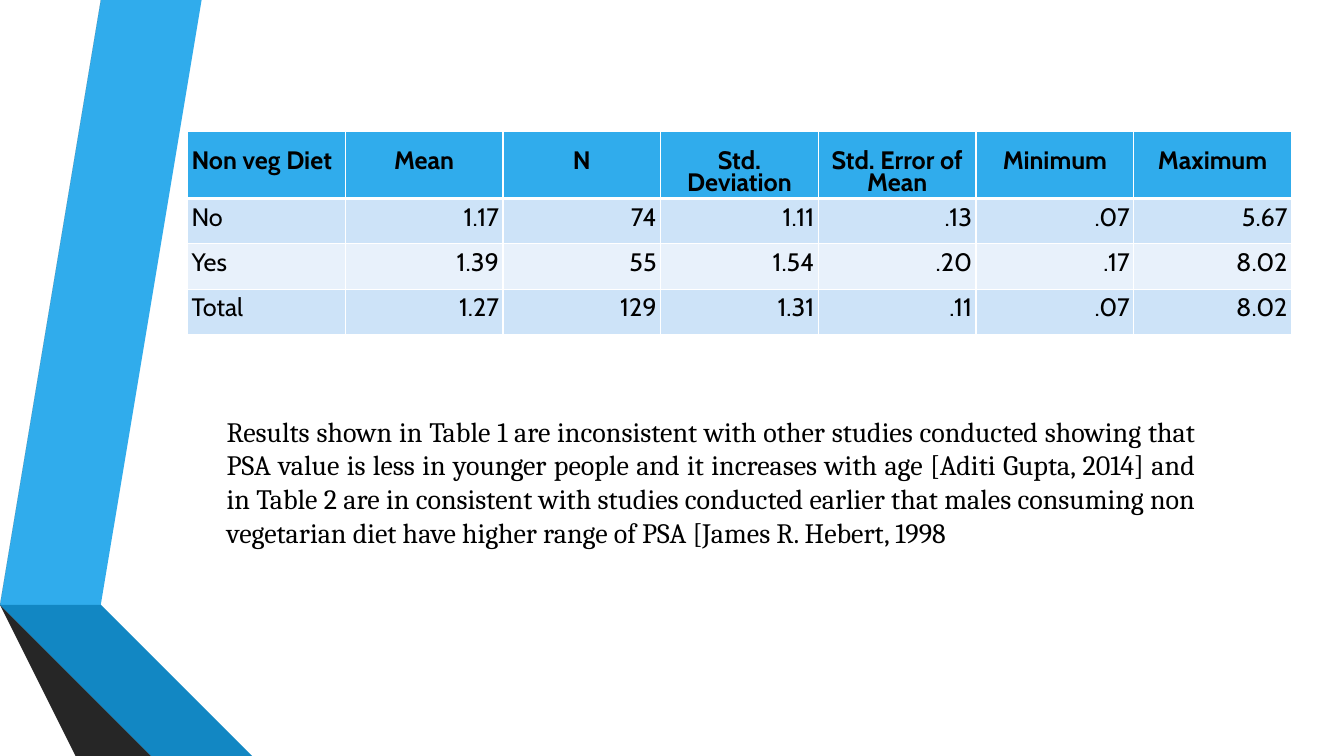
from dataclasses import dataclass

from lxml import etree
from pptx import Presentation
from pptx import util as u
from pptx.dml import color
from pptx.enum import text
from pptx.oxml import ns
from pptx.slide import Slide
from pptx.table import _Cell
from pptx.text.text import _Paragraph


@dataclass(frozen=True)
class Theme:
    blue: str = "30ACEC"
    deep_blue: str = "1287C3"
    navy: str = "0C5A82"
    gray: str = "595959"
    dark_gray: str = "404040"
    charcoal: str = "262626"
    band_dark: str = "CDE3F8"
    band_light: str = "E8F1FB"
    white: str = "FFFFFF"
    ink: str = "000000"
    table_font: str = "Cabin"
    body_font: str = "Cambria"
    table_size: int = 18
    body_size: int = 20
    table_line: int = 16


@dataclass(frozen=True)
class Ribbon:
    fill: str
    points: tuple[tuple[float, float], ...]


THEME = Theme()

RIBBONS = (
    Ribbon(THEME.blue, ((0.5, 5.78), (0.77, 5.83), (1.73, 0), (1.45, 0))),
    Ribbon(THEME.gray, ((1.39, 0), (1.11, 0), (0.16, 5.73), (0.44, 5.77))),
    Ribbon(THEME.charcoal, ((0.16, 5.73), (1.45, 7.5), (1.51, 7.5))),
    Ribbon(THEME.navy, ((0.5, 5.79), (2.08, 7.5), (2.14, 7.5))),
    Ribbon(THEME.deep_blue, ((0.5, 5.79), (2.14, 7.5), (2.83, 7.5), (0.77, 5.83), (0.5, 5.78))),
    Ribbon(THEME.dark_gray, ((2.02, 7.5), (0.48, 5.83), (0.43, 5.78), (0.44, 5.77),
                             (0.16, 5.73), (1.51, 7.5))),
)

DIET_ROWS = (
    ("Non veg Diet", "Mean", "N", "Std. Deviation", "Std. Error of Mean", "Minimum", "Maximum"),
    ("No", "1.17", "74", "1.11", ".13", ".07", "5.67"),
    ("Yes", "1.39", "55", "1.54", ".20", ".17", "8.02"),
    ("Total", "1.27", "129", "1.31", ".11", ".07", "8.02"),
)

FINDINGS = (
    "Results shown in Table 1 are inconsistent with other studies conducted showing that "
    "PSA value is less in younger people and it increases with age [Aditi Gupta, 2014] and "
    "in Table 2 are in consistent with studies conducted earlier that males consuming non "
    "vegetarian diet have higher range of PSA [James R. Hebert, 1998"
)


def add_span(para: _Paragraph, words: str, font: str, size: int, bold: bool = False) -> None:
    span = para.add_run()
    span.text = words
    span.font.name = font
    span.font.size = u.Pt(size)
    span.font.bold = bold
    span.font.color.rgb = color.RGBColor.from_string(THEME.ink)


def add_ribbons(page: Slide) -> None:
    group = page.shapes.add_group_shape()
    for ribbon in RIBBONS:
        start, *rest = ribbon.points
        builder = group.shapes.build_freeform(*start, scale=u.Inches(1))
        builder.add_line_segments(rest, close=True)
        shape = builder.convert_to_shape()
        shape.shadow.inherit = False
        shape.fill.solid()
        shape.fill.fore_color.rgb = color.RGBColor.from_string(ribbon.fill)
        shape.line.fill.background()


def set_borders(cell: _Cell, row: int) -> None:
    """Thin white rules, with a thick one under the header."""
    properties = cell._tc.get_or_add_tcPr()
    widths = {"lnL": 1, "lnR": 1, "lnT": 3 if row == 1 else 1, "lnB": 3 if row == 0 else 1}
    for side, width in widths.items():
        line = etree.SubElement(properties, ns.qn(f"a:{side}"), w=str(u.Pt(width)))
        fill = etree.SubElement(line, ns.qn("a:solidFill"))
        etree.SubElement(fill, ns.qn("a:srgbClr"), val=THEME.white)


def fill_cell(cell: _Cell, row: int, column: int, words: str) -> None:
    header = row == 0
    set_borders(cell, row)
    band = THEME.band_dark if row % 2 else THEME.band_light
    cell.fill.solid()
    cell.fill.fore_color.rgb = color.RGBColor.from_string(THEME.blue if header else band)
    cell.margin_left = cell.margin_right = u.Inches(0.04)
    cell.margin_top = u.Pt(THEME.table_line) if header else 0
    cell.margin_bottom = 0
    cell.vertical_anchor = text.MSO_ANCHOR.TOP if header else text.MSO_ANCHOR.MIDDLE
    para = cell.text_frame.paragraphs[0]
    para.line_spacing = u.Pt(THEME.table_line)
    if column == 0:
        para.alignment = text.PP_ALIGN.LEFT
    else:
        para.alignment = text.PP_ALIGN.CENTER if header else text.PP_ALIGN.RIGHT
    add_span(para, words, THEME.table_font, THEME.table_size, bold=header)


def add_diet_table(page: Slide) -> None:
    frame = page.shapes.add_table(len(DIET_ROWS), len(DIET_ROWS[0]), u.Inches(1.86),
                                  u.Inches(1.3), u.Inches(10.95), u.Inches(2.02))
    table = frame.table
    for row, values in enumerate(DIET_ROWS):
        table.rows[row].height = u.Inches(0.45 if row else 0.67)
        for column, words in enumerate(values):
            fill_cell(table.cell(row, column), row, column, words)


def add_findings(page: Slide) -> None:
    box = page.shapes.add_textbox(u.Inches(2.15), u.Inches(4.06), u.Inches(9.81), u.Inches(1.45))
    box.text_frame.word_wrap = True
    box.text_frame.auto_size = text.MSO_AUTO_SIZE.SHAPE_TO_FIT_TEXT
    para = box.text_frame.paragraphs[0]
    para.alignment = text.PP_ALIGN.JUSTIFY
    add_span(para, FINDINGS, THEME.body_font, THEME.body_size)


def main() -> None:
    deck = Presentation()
    deck.slide_width, deck.slide_height = u.Inches(13.33), u.Inches(7.5)
    page = deck.slides.add_slide(deck.slide_layouts[6])  # blank layout
    add_ribbons(page)
    add_diet_table(page)
    add_findings(page)
    deck.save("out.pptx")


if __name__ == "__main__":
    main()
